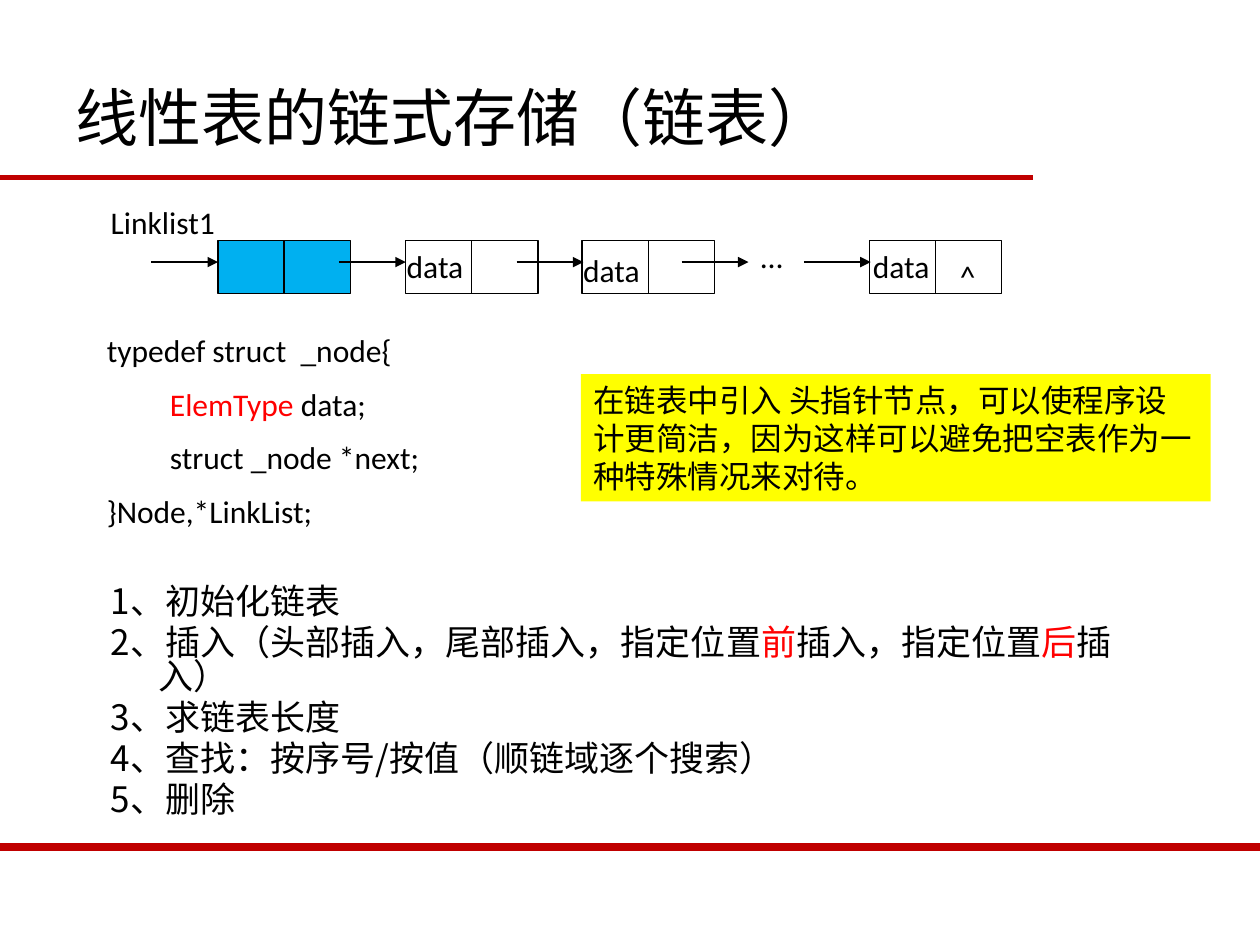
"""Build a slide that explains the linked storage of linear lists."""
from lxml import etree
from pptx import Presentation, util as u
from pptx.dml.color import RGBColor
from pptx.enum import shapes, text
from pptx.oxml.ns import qn

COLORS = {"black": "000000", "red": "FF0000", "rule": "C00000", "head": "00B0F0",
          "white": "FFFFFF", "note": "FFFF00"}
HAN, LATIN = "Noto Sans CJK SC", "Calibri"

TITLE = [["线性表的链式存储（链表）"]]
OPERATIONS = [
    ["1、初始化链表"],
    ["2、插入（头部插入，尾部插入，指定位置", ("前", "red"), "插入，指定位置",
     ("后", "red"), "插入）"],
    ["3、求链表长度"],
    ["4、查找：按序号/按值（顺链域逐个搜索）"],
    ["5、删除"],
]
CODE = [["typedef struct  _node{"], [("ElemType", "red"), " data;"],
        ["struct _node *next;"], ["}Node,*LinkList;"]]
NOTE = [["在链表中引入 头指针节点，可以使程序设计更简洁，"
         "因为这样可以避免把空表作为一种特殊情况来对待。"]]

RULES = [(8.2, 1.41, 3), (10, 6.72, 4.5)]
NODES = [(1.73, "head"), (3.22, "white"), (4.62, "white"), (6.9, "white")]
NODE_TOP, NODE_WIDTH, NODE_HEIGHT = 1.91, 1.05, 0.42
ARROW_STARTS = [1.2, 2.69, 4.1, 5.41, 6.38]
ARROW_Y, ARROW_LENGTH = 2.08, 0.53
LABELS = [("Linklist1", 0.78, 1.56, 1.56), ("data", 3.13, 1.91, 0.77),
          ("data", 4.53, 1.94, 0.7), ("data", 6.83, 1.91, 0.67),
          ("^", 7.52, 1.99, 0.35), ("…", 5.94, 1.83, 0.44)]


def color(name):
    return RGBColor.from_string(COLORS[name])


def inches(*lengths):
    return [u.Inches(length) for length in lengths]


def apply(target, values):
    for name, value in values.items():
        setattr(target, name, value)


def write(shape, lines, size, face, layout=None, anchor=text.MSO_ANCHOR.TOP):
    frame = shape.text_frame
    apply(frame, {"word_wrap": True, "vertical_anchor": anchor})
    for index, line in enumerate(lines):
        para = frame.add_paragraph() if index else frame.paragraphs[0]
        apply(para, {"alignment": text.PP_ALIGN.LEFT, **(layout or {})})
        if not index:
            para.space_before = u.Pt(0)
        for piece in line:
            words, shade = (piece, "black") if isinstance(piece, str) else piece
            span = para.add_run()
            span.text = words
            apply(span.font, {"size": u.Pt(size), "name": face})
            span.font.color.rgb = color(shade)
            etree.SubElement(span.font._element, qn("a:ea"), typeface=face)
    return frame


def add_text(page, place, *content):
    return write(page.shapes.add_textbox(*inches(*place)), *content)


def add_line(page, start, end, shade="black", width=0.75, arrow=False):
    line = page.shapes.add_connector(shapes.MSO_CONNECTOR.STRAIGHT, *inches(*start, *end))
    line.line.color.rgb = color(shade)
    line.line.width = u.Pt(width)
    if arrow:
        etree.SubElement(line.line._get_or_add_ln(), qn("a:tailEnd"), type="triangle")
    etree.SubElement(line._element.spPr, qn("a:effectLst"))


def add_box(page, place, fill, outlined=True):
    box = page.shapes.add_shape(shapes.MSO_SHAPE.RECTANGLE, *inches(*place))
    box.shadow.inherit = False
    box.fill.solid()
    box.fill.fore_color.rgb = color(fill)
    if outlined:
        box.line.color.rgb = color("black")
        box.line.width = u.Pt(0.75)
    else:
        box.line.fill.background()
    return box


def draw_list(page):
    for left, fill in NODES:
        add_box(page, (left, NODE_TOP, NODE_WIDTH, NODE_HEIGHT), fill)
        middle = left + NODE_WIDTH / 2
        add_line(page, (middle, NODE_TOP), (middle, NODE_TOP + NODE_HEIGHT))
    for start in ARROW_STARTS:
        add_line(page, (start, ARROW_Y), (start + ARROW_LENGTH, ARROW_Y), arrow=True)
    for words, left, top, width in LABELS:
        add_text(page, (left, top, width, 0.4), [[words]], 18, LATIN)


def main():
    deck = Presentation()
    apply(deck, {"slide_width": u.Inches(10), "slide_height": u.Inches(7.5)})
    page = deck.slides.add_slide(deck.slide_layouts[6])
    for end, y, width in RULES:
        add_line(page, (0, y), (end, y), "rule", width)

    add_text(page, (0.5, 0.3, 9, 1.25), TITLE, 36, HAN, None, text.MSO_ANCHOR.MIDDLE)
    operations = add_text(page, (0.78, 4.61, 8.67, 1.97), OPERATIONS, 20, HAN,
                          {"space_before": u.Pt(4), "line_spacing": u.Pt(19.5)})
    for para in operations.paragraphs:
        hanging = para._p.get_or_add_pPr()
        hanging.set("marL", str(u.Inches(0.38)))
        hanging.set("indent", str(-u.Inches(0.38)))

    draw_list(page)
    code = add_text(page, (0.75, 2.58, 3.08, 1.76), CODE, 18, LATIN,
                    {"space_before": u.Pt(9)})
    for para in code.paragraphs[1:3]:
        para.level = 1
        para._p.get_or_add_pPr().set("marL", str(u.Inches(0.5)))

    note = add_box(page, (4.61, 2.97, 5, 1.01), "note", outlined=False)
    write(note, NOTE, 18, HAN, {"line_spacing": u.Pt(21.8)})
    deck.save("out.pptx")


if __name__ == "__main__":
    main()
